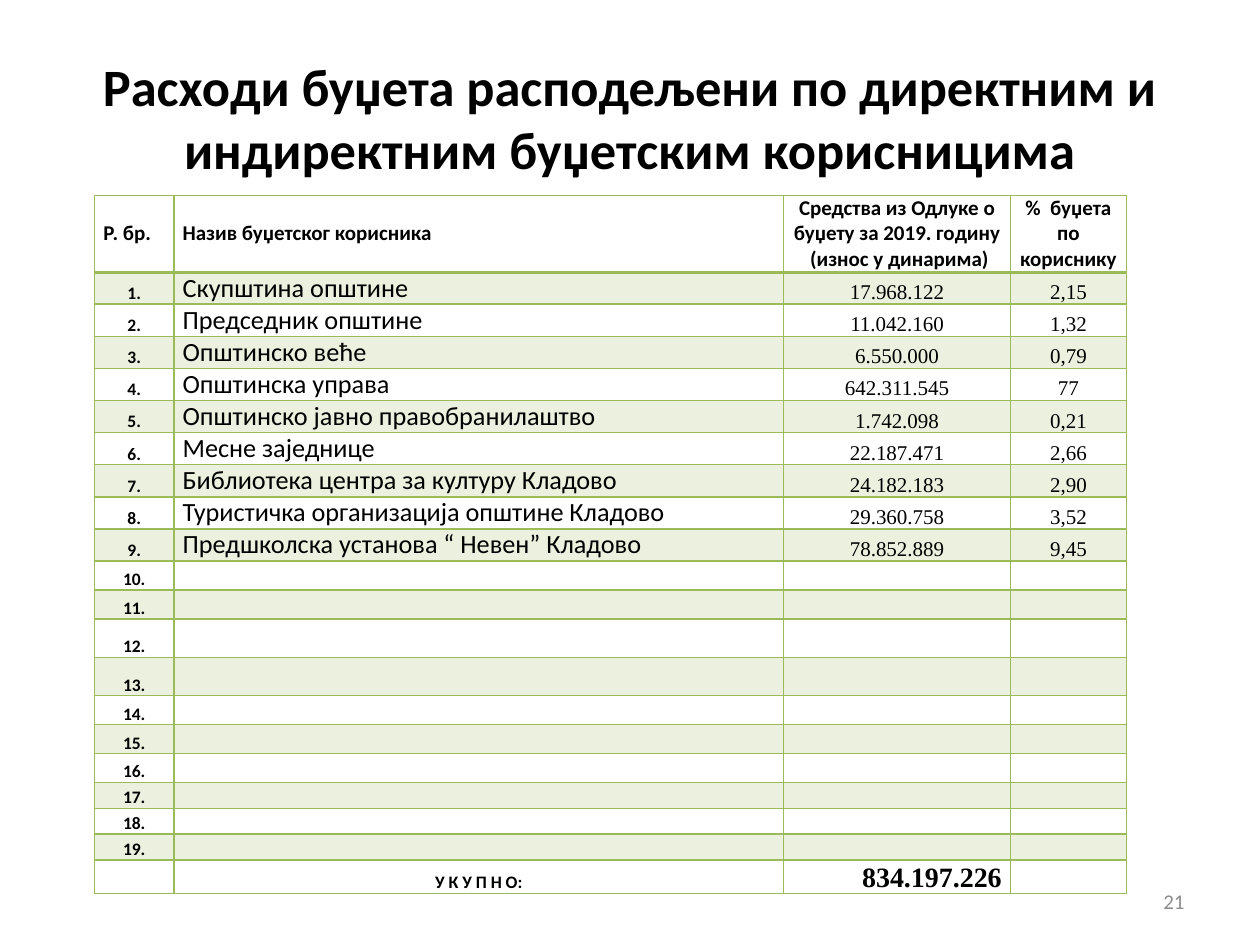
import lxml.etree
import pptx
import pptx.dml.color
import pptx.enum.text
import pptx.oxml.ns
import pptx.util

Inches = pptx.util.Inches
Pt = pptx.util.Pt
ALIGN = pptx.enum.text.PP_ALIGN
ANCHOR = pptx.enum.text.MSO_ANCHOR
qn = pptx.oxml.ns.qn

BLACK = pptx.dml.color.RGBColor(0x00, 0x00, 0x00)
GREY = pptx.dml.color.RGBColor(0x8C, 0x8C, 0x8C)
GREEN = pptx.dml.color.RGBColor(0x9B, 0xBB, 0x59)
PALE_GREEN = pptx.dml.color.RGBColor(0xEB, 0xF1, 0xDE)
SANS, SERIF = "Calibri", "Times New Roman"

TITLE = "Расходи буџета расподељени по директним и индиректним буџетским корисницима"
HEADINGS = [
    "Р. бр.",
    "Назив буџетског корисника",
    "Средства из Одлуке о буџету за 2019. годину  (износ у динарима)",
    "%  буџета по кориснику",
]
BENEFICIARIES = [
    ("Скупштина општине", "17.968.122", "2,15"),
    ("Председник општине", "11.042.160", "1,32"),
    ("Општинско веће", "6.550.000", "0,79"),
    ("Општинска управа", "642.311.545", "77"),
    ("Општинско јавно правобранилаштво", "1.742.098", "0,21"),
    ("Месне заједнице", "22.187.471", "2,66"),
    ("Библиотека центра за културу Кладово", "24.182.183", "2,90"),
    ("Туристичка организација општине Кладово", "29.360.758", "3,52"),
    ("Предшколска установа “ Невен” Кладово", "78.852.889", "9,45"),
]
NUMBERED_ROWS = 19
TOTAL = ["", "У К У П Н О:", "834.197.226", ""]
COLUMN_WIDTHS = [0.63, 4.84, 1.8, 0.92]
ROW_HEIGHTS = [0.61] + [0.255] * 9 + [0.23] * 2 + [0.305] * 2 + [0.23] * 3 + [0.205] * 3 + [0.25]

HEADING_STYLES = [(12, SANS, True, align) for align in (ALIGN.LEFT, ALIGN.LEFT, ALIGN.CENTER, ALIGN.CENTER)]
BODY_STYLES = [
    (10, SANS, True, ALIGN.CENTER),
    (15, SANS, False, ALIGN.LEFT),
    (12, SERIF, False, ALIGN.CENTER),
    (12, SERIF, False, ALIGN.CENTER),
]
TOTAL_STYLES = [
    (10, SANS, True, ALIGN.CENTER),
    (10, SANS, True, ALIGN.CENTER),
    (16, SERIF, True, ALIGN.RIGHT),
    (10, SANS, True, ALIGN.CENTER),
]


def style_paragraph(paragraph, style, color):
    """Apply size, typeface, weight, alignment and colour to a paragraph."""
    size, typeface, bold, paragraph.alignment = style
    paragraph.font.size = Pt(size)
    paragraph.font.name = typeface
    paragraph.font.bold = bold
    paragraph.font.color.rgb = color


def add_label(slide, text, box, style, color):
    """Add a vertically centred, wrapping text box."""
    frame = slide.shapes.add_textbox(*map(Inches, box)).text_frame
    frame.word_wrap = True
    frame.vertical_anchor = ANCHOR.MIDDLE
    frame.text = text
    style_paragraph(frame.paragraphs[0], style, color)


def add_borders(cell, bottom_width):
    """Draw green lines on all four sides of a cell."""
    properties = cell._tc.get_or_add_tcPr()
    for side, width in (("L", 1), ("R", 1), ("T", 1), ("B", bottom_width)):
        line = lxml.etree.SubElement(properties, qn(f"a:ln{side}"), w=str(Pt(width)))
        fill = lxml.etree.SubElement(line, qn("a:solidFill"))
        lxml.etree.SubElement(fill, qn("a:srgbClr"), val=str(GREEN))


def fill_cell(cell, text, style, anchor, shaded, bottom_width):
    """Give a cell its text, margins, borders and background."""
    cell.margin_left = cell.margin_right = Inches(0.07)
    cell.margin_top = cell.margin_bottom = 0
    cell.vertical_anchor = anchor
    add_borders(cell, bottom_width)
    if shaded:
        cell.fill.solid()
        cell.fill.fore_color.rgb = PALE_GREEN
    else:
        cell.fill.background()
    paragraph = cell.text_frame.paragraphs[0]
    if text:
        paragraph.text = text
    else:
        lxml.etree.SubElement(paragraph._p, qn("a:endParaRPr"), sz="1000")
    style_paragraph(paragraph, style, BLACK)


def budget_rows():
    """Return the texts and styles of every table row."""
    rows = [(HEADINGS, HEADING_STYLES)]
    for index in range(NUMBERED_ROWS):
        entry = BENEFICIARIES[index] if index < len(BENEFICIARIES) else ("", "", "")
        rows.append(([f"{index + 1}.", *entry], BODY_STYLES))
    return rows + [(TOTAL, TOTAL_STYLES)]


def add_budget_table(slide):
    """Add the table of budget beneficiaries."""
    rows = budget_rows()
    table = slide.shapes.add_table(
        len(rows), len(COLUMN_WIDTHS), Inches(0.75), Inches(1.55),
        Inches(sum(COLUMN_WIDTHS)), Inches(sum(ROW_HEIGHTS)),
    ).table
    table.first_row = table.horz_banding = False
    for column, width in zip(table.columns, COLUMN_WIDTHS):
        column.width = Inches(width)
    for index, (texts, styles) in enumerate(rows):
        table.rows[index].height = Inches(ROW_HEIGHTS[index])
        anchor, bottom_width = (ANCHOR.BOTTOM, 1) if index else (ANCHOR.MIDDLE, 2)
        for cell, text, style in zip(table.rows[index].cells, texts, styles):
            fill_cell(cell, text, style, anchor, index % 2 == 1, bottom_width)


def main():
    """Build and save the budget slide."""
    presentation = pptx.Presentation()
    presentation.slide_width, presentation.slide_height = Inches(10), Inches(7.5)
    slide = presentation.slides.add_slide(presentation.slide_layouts[6])
    add_label(slide, TITLE, (0.5, 0.3, 9, 1.25), (30, SANS, True, ALIGN.CENTER), BLACK)
    add_budget_table(slide)
    add_label(slide, "21", (7.17, 6.95, 2.33, 0.4), (12, SANS, False, ALIGN.RIGHT), GREY)
    presentation.save("out.pptx")


if __name__ == "__main__":
    main()
